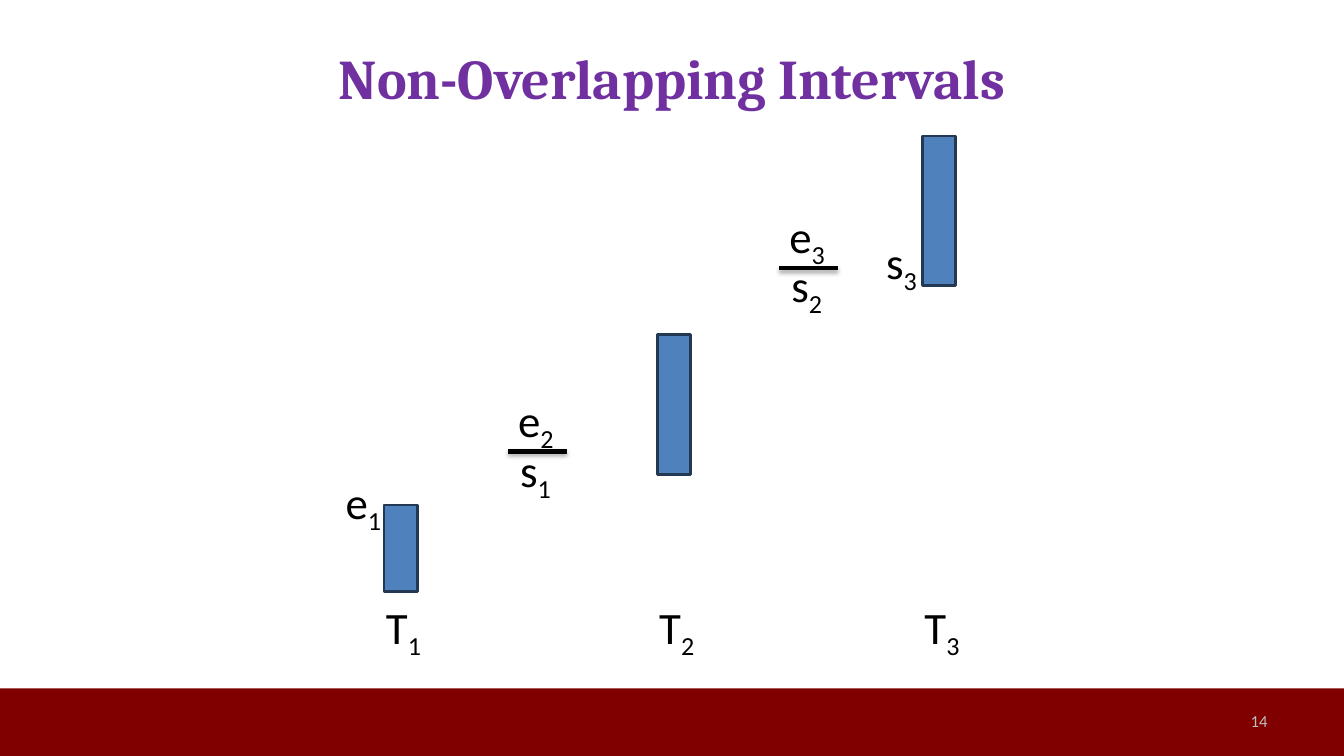
from dataclasses import dataclass

from lxml import etree
from pptx import Presentation
from pptx.dml.color import RGBColor
from pptx.enum.shapes import MSO_CONNECTOR, MSO_SHAPE
from pptx.enum.text import MSO_ANCHOR, PP_ALIGN
from pptx.oxml import parse_xml
from pptx.oxml.ns import nsdecls, qn
from pptx.slide import Slide
from pptx.util import Inches, Pt

RECTANGLE = MSO_SHAPE.RECTANGLE
STRAIGHT = MSO_CONNECTOR.STRAIGHT
LEFT, CENTER, RIGHT = PP_ALIGN.LEFT, PP_ALIGN.CENTER, PP_ALIGN.RIGHT
TOP, MIDDLE = MSO_ANCHOR.TOP, MSO_ANCHOR.MIDDLE

COLORS = {
    "footer": "800000",
    "page": "BFBFBF",
    "title": "7030A0",
    "bar": "4F81BD",
    "bar_edge": "233953",
    "ink": "000000",
}
SLIDE_WIDTH, SLIDE_HEIGHT = 13.33, 7.5
BAR_WIDTH = 0.33
LABEL_HEIGHT = 0.64
LABEL_WIDTHS = {"T": 0.57, "s": 0.53, "e": 0.58}
AXIS_TOP = 5.9


@dataclass
class Interval:
    index: str
    left: float
    top: float
    height: float


@dataclass
class Endpoint:
    letter: str
    index: str
    left: float
    top: float


@dataclass
class Divider:
    left: float
    top: float


INTERVALS = [
    Interval("1", 3.81, 5.01, 0.86),
    Interval("2", 6.52, 3.32, 1.39),
    Interval("3", 9.15, 1.35, 1.48),
]
ENDPOINTS = [
    Endpoint("s", "1", 5.06, 4.34),
    Endpoint("e", "1", 3.33, 4.66),
    Endpoint("s", "2", 7.75, 2.51),
    Endpoint("e", "2", 5.04, 3.85),
    Endpoint("e", "3", 7.73, 2.02),
    Endpoint("s", "3", 8.69, 2.28),
]
DIVIDERS = [Divider(5.04, 4.48), Divider(7.73, 2.66)]


def add_text(slide: Slide, text: str, left: float, top: float, width: float,
             height: float, *, size: int, color: str, subscript: str = "",
             font: str = "Calibri", bold: bool = False, align: PP_ALIGN = LEFT,
             anchor: MSO_ANCHOR = TOP, wrap: bool = True) -> None:
    box = slide.shapes.add_textbox(
        Inches(left), Inches(top), Inches(width), Inches(height))
    frame = box.text_frame
    frame.word_wrap = wrap
    frame.vertical_anchor = anchor
    paragraph = frame.paragraphs[0]
    paragraph.alignment = align
    for part, baseline in ((text, 0), (subscript, -25000)):
        if not part:
            continue
        run = paragraph.add_run()
        run.text = part
        run.font.name = font
        run.font.size = Pt(size)
        run.font.bold = bold
        run.font.color.rgb = RGBColor.from_string(COLORS[color])
        if baseline:
            run.font._element.set("baseline", str(baseline))


def add_block(slide: Slide, left: float, top: float, width: float,
              height: float, fill: str, edge: str = "") -> None:
    block = slide.shapes.add_shape(
        RECTANGLE, Inches(left), Inches(top), Inches(width), Inches(height))
    block.shadow.inherit = False
    block.fill.solid()
    block.fill.fore_color.rgb = RGBColor.from_string(COLORS[fill])
    if edge:
        block.line.color.rgb = RGBColor.from_string(COLORS[edge])
        block.line.width = Pt(2)
    else:
        block.line.fill.background()


def add_label(slide: Slide, letter: str, index: str, left: float,
              top: float) -> None:
    add_text(slide, letter, left, top, LABEL_WIDTHS[letter], LABEL_HEIGHT,
             subscript=index, size=32, color="ink", wrap=False)


def add_divider(slide: Slide, divider: Divider) -> None:
    rule = slide.shapes.add_connector(
        STRAIGHT, Inches(divider.left), Inches(divider.top),
        Inches(divider.left + LABEL_WIDTHS["e"]), Inches(divider.top))
    rule.line.color.rgb = RGBColor.from_string(COLORS["ink"])
    rule.line.width = Pt(3)
    # Soft shadow straight below the rule
    effects = etree.SubElement(rule._element.spPr, qn("a:effectLst"))
    effects.append(parse_xml(
        f'<a:outerShdw {nsdecls("a")} blurRad="{Pt(3.1)}" dist="{Pt(1.8)}" '
        f'dir="5400000" rotWithShape="0"><a:srgbClr val="{COLORS["ink"]}">'
        '<a:alpha val="35000"/></a:srgbClr></a:outerShdw>'))


def main() -> None:
    deck = Presentation()
    deck.slide_width = Inches(SLIDE_WIDTH)
    deck.slide_height = Inches(SLIDE_HEIGHT)
    slide = deck.slides.add_slide(deck.slide_layouts[6])

    # Footer band and page number
    add_block(slide, 0, 6.83, SLIDE_WIDTH, 0.67, "footer")
    add_text(slide, "14", 9.56, 6.95, 3.11, 0.4, size=12, color="page",
             align=RIGHT, anchor=MIDDLE)

    # Title
    add_text(slide, "Non-Overlapping Intervals", 0, 0.38, SLIDE_WIDTH, 0.77,
             size=40, color="title", font="Cambria", bold=True, align=CENTER)

    # Interval bars with their names along the bottom
    for interval in INTERVALS:
        add_block(slide, interval.left, interval.top, BAR_WIDTH,
                  interval.height, "bar", "bar_edge")
        add_label(slide, "T", interval.index, interval.left - 0.08, AXIS_TOP)

    # Start and end labels
    for endpoint in ENDPOINTS:
        add_label(slide, endpoint.letter, endpoint.index, endpoint.left,
                  endpoint.top)

    # Rules between an end and the next start
    for divider in DIVIDERS:
        add_divider(slide, divider)

    deck.save("out.pptx")


if __name__ == "__main__":
    main()
